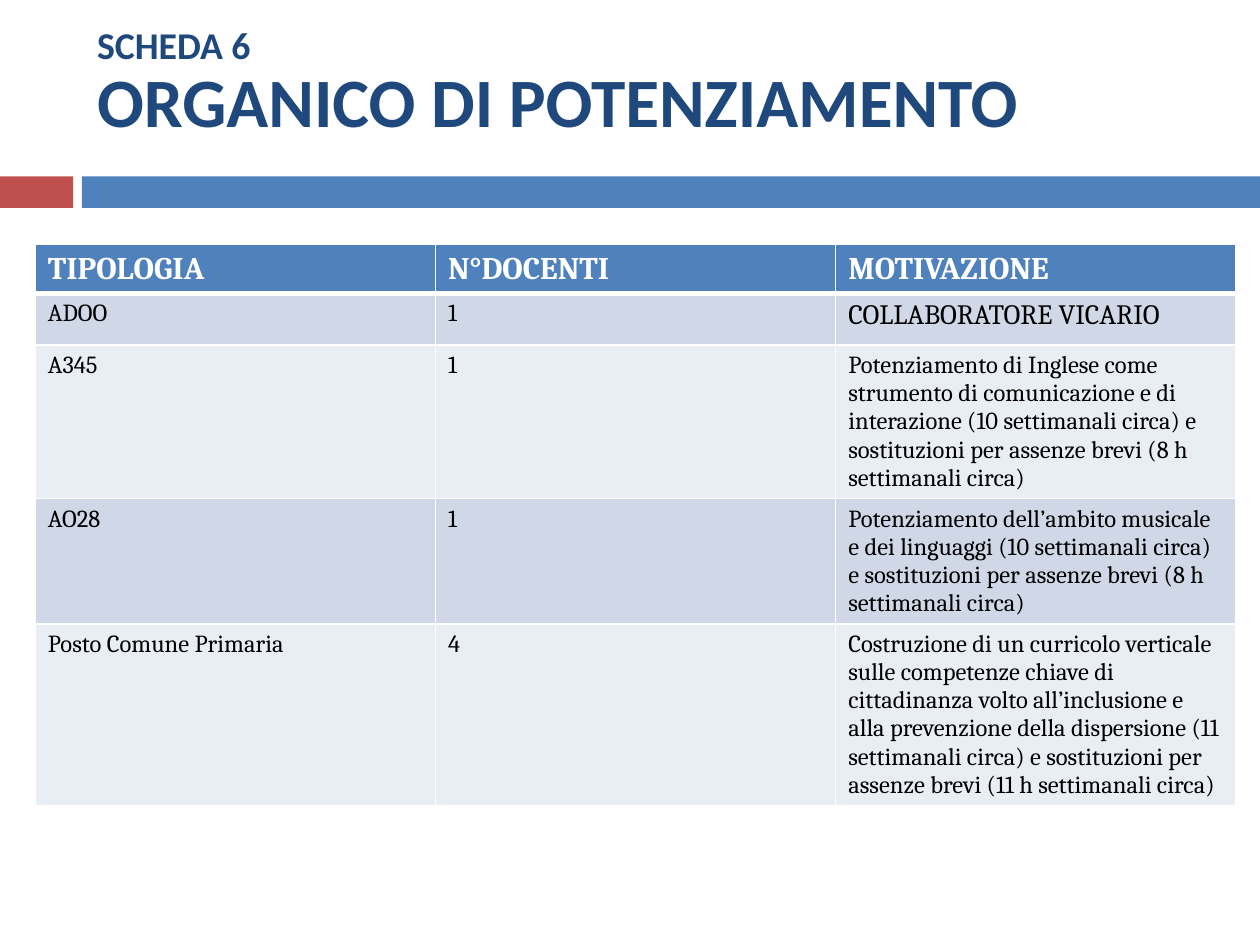
from lxml.etree import SubElement
from pptx import Presentation
from pptx.dml.color import RGBColor
from pptx.enum.shapes import MSO_SHAPE
from pptx.enum.text import MSO_ANCHOR, MSO_AUTO_SIZE, PP_ALIGN
from pptx.oxml.ns import qn
from pptx.util import Inches, Pt

COLORS = {
    "navy": "1F497D", "blue": "4F81BD", "red": "C0504D", "white": "FFFFFF",
    "black": "000000", "band_dark": "D0D8E8", "band_light": "E9EDF4",
}


def add_run(paragraph, text, font_name, size, color, bold=False):
    run = paragraph.add_run()
    run.text = text
    run.font.name = font_name
    run.font.size = Pt(size)
    run.font.bold = bold
    run.font.color.rgb = RGBColor.from_string(COLORS[color])


def add_border(cell, side, width):
    """Draw a white line on one side of a cell; call before setting its fill."""
    line = SubElement(cell._tc.get_or_add_tcPr(), qn(f"a:ln{side}"), w=str(Pt(width)))
    fill = SubElement(line, qn("a:solidFill"))
    SubElement(fill, qn("a:srgbClr"), val=COLORS["white"])


presentation = Presentation()
presentation.slide_width = Inches(10)
presentation.slide_height = Inches(7.5)
slide = presentation.slides.add_slide(presentation.slide_layouts[5])

# Title
title = slide.shapes.title
title.left, title.top = Inches(0.67), Inches(0.13)
title.width, title.height = Inches(8.92), Inches(1.08)
frame = title.text_frame
frame.word_wrap = True
frame.auto_size = MSO_AUTO_SIZE.NONE
frame.vertical_anchor = MSO_ANCHOR.MIDDLE
heading = frame.paragraphs[0]
heading.alignment = PP_ALIGN.LEFT
heading.line_spacing = 0.9
add_run(heading, "SCHEDA 6 ", "Calibri", 21.6, "navy", bold=True)
heading.add_line_break()
SubElement(heading._p[-1], qn("a:rPr"), sz="2160")
add_run(heading, "ORGANICO DI POTENZIAMENTO", "Calibri", 39.6, "navy", bold=True)

# Bars below the title
for left, width, color in [(0, 0.58, "red"), (0.65, 9.35, "blue")]:
    bar = slide.shapes.add_shape(
        MSO_SHAPE.RECTANGLE, Inches(left), Inches(1.4), Inches(width), Inches(0.25))
    bar.shadow.inherit = False
    bar.fill.solid()
    bar.fill.fore_color.rgb = RGBColor.from_string(COLORS[color])
    bar.line.fill.background()

# Staff table
rows = [
    ("TIPOLOGIA", "N°DOCENTI", "MOTIVAZIONE"),
    ("ADOO", "1", "COLLABORATORE VICARIO"),
    ("A345", "1",
     "Potenziamento di Inglese come strumento di comunicazione e di interazione "
     "(10 settimanali circa) e sostituzioni per assenze brevi (8 h settimanali circa)"),
    ("AO28", "1",
     "Potenziamento dell’ambito musicale e dei linguaggi (10 settimanali circa) "
     "e sostituzioni per assenze brevi (8 h settimanali circa)"),
    ("Posto Comune Primaria", "4",
     "Costruzione di un curricolo verticale sulle competenze chiave di cittadinanza "
     "volto all’inclusione e alla prevenzione della dispersione (11 settimanali circa) "
     "e sostituzioni per assenze brevi (11 h settimanali circa)"),
]
table = slide.shapes.add_table(
    len(rows), 3, Inches(0.28), Inches(1.94), Inches(9.53), Inches(1.86)).table

for row_index, texts in enumerate(rows):
    is_header = row_index == 0
    table.rows[row_index].height = Inches(0.22 if is_header else 0.41)
    if is_header:
        fill_color = "blue"
    else:
        fill_color = "band_dark" if row_index % 2 else "band_light"
    for column_index, text in enumerate(texts):
        cell = table.cell(row_index, column_index)
        for side in "LRTB":
            below_header = (row_index, side) in [(0, "B"), (1, "T")]
            add_border(cell, side, 3 if below_header else 1)
        cell.fill.solid()
        cell.fill.fore_color.rgb = RGBColor.from_string(COLORS[fill_color])
        if is_header:
            size = 18
        else:
            size = 16 if text == "COLLABORATORE VICARIO" else 14
        add_run(cell.text_frame.paragraphs[0], text, "Cambria", size,
                "white" if is_header else "black", bold=is_header)

presentation.save("out.pptx")
